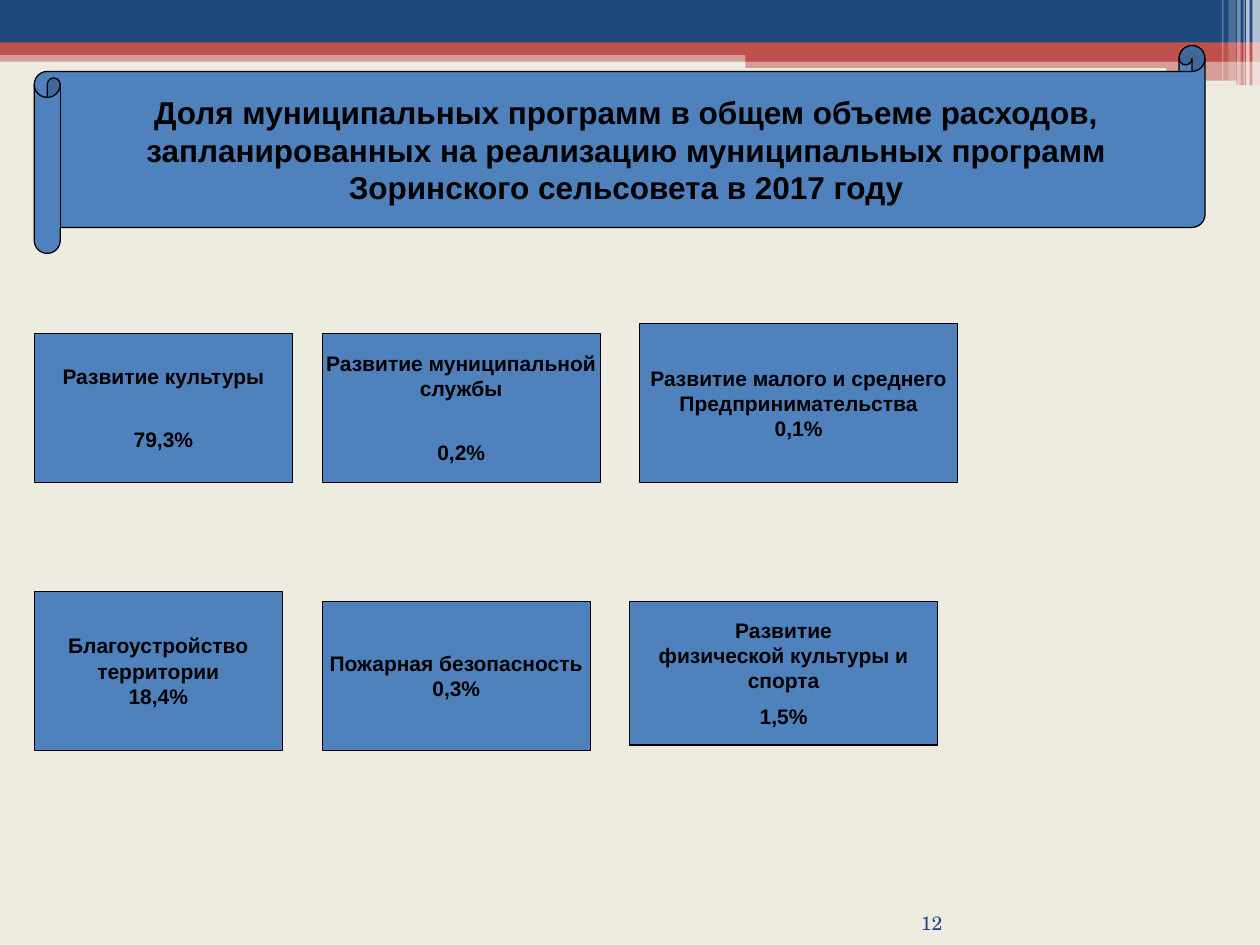
from dataclasses import dataclass

import pptx
import pptx.dml.color
import pptx.enum.shapes
import pptx.enum.text
import pptx.oxml
import pptx.oxml.ns
import pptx.util

Pt = pptx.util.Pt
Kind = pptx.enum.shapes.MSO_SHAPE
Align = pptx.enum.text.PP_ALIGN
Anchor = pptx.enum.text.MSO_ANCHOR

COLORS = {
    "cream": "EEECE1",
    "navy": "1F497D",
    "red": "C0504D",
    "blue": "4F81BD",
    "white": "FFFFFF",
    "black": "000000",
}


@dataclass(frozen=True)
class Band:
    left: float
    top: float
    width: float
    height: float
    color: str
    opacity: int = 100
    kind: Kind = Kind.RECTANGLE


@dataclass(frozen=True)
class Panel:
    left: float
    top: float
    width: float
    height: float
    lines: tuple[str, ...]
    gap_before_last: float = 0
    size: float = 12
    kind: Kind = Kind.FLOWCHART_PROCESS


HEADER_BANDS = (
    Band(0, 28.8, 720, 6.48, "red", 50),
    Band(0, 0, 720, 24.48, "navy"),
    Band(0, 24.2, 720, 7.2, "red"),
    Band(426, 28.08, 294, 7.2, "red"),
    Band(426, 34.7, 294, 14, "red", 50),
    Band(425.5, 38.9, 241, 2, "cream", kind=Kind.ROUNDED_RECTANGLE),
    Band(580.5, 46.1, 126, 2.6, "cream", kind=Kind.ROUNDED_RECTANGLE),
    Band(715.7, 0, 4.3, 48.8, "white", 65),
    Band(712.1, 0, 2, 48.8, "white", 65),
    Band(710.6, 0, 0.72, 48.8, "white", 60),
    Band(707, 0, 2, 48.8, "white", 40),
    Band(702, 0, 4.3, 46.1, "white", 20),
    Band(698.4, 0, 0.72, 46.1, "white", 30),
)

FIRST_COLUMN, SECOND_COLUMN = 19.6, 184.2

PROGRAMS = (
    Panel(FIRST_COLUMN, 190.5, 147.6, 85.1,
          ("Развитие культуры", "79,3%"), 22),
    Panel(SECOND_COLUMN, 190.5, 158.8, 85.1,
          ("Развитие муниципальной", "службы", "0,2%"), 22),
    Panel(365.6, 184.8, 181.6, 90.8,
          ("Развитие малого и среднего", "Предпринимательства", "0,1%")),
    Panel(FIRST_COLUMN, 337.9, 141.7, 90.8,
          ("Благоустройство", "территории", "18,4%")),
    Panel(SECOND_COLUMN, 343.6, 153.1, 85.1,
          ("Пожарная безопасность", "0,3%")),
    Panel(359.9, 343.6, 175.8, 82.1,
          ("Развитие", "физической культуры и", "спорта", "1,5%"), 6),
)

TITLE = Panel(
    FIRST_COLUMN, 26, 669, 118.8,
    (
        "Доля муниципальных программ в общем объеме расходов,",
        "запланированных на реализацию муниципальных программ",
        "Зоринского сельсовета в 2017 году",
    ),
    size=18,
    kind=Kind.HORIZONTAL_SCROLL,
)


def rgb(name: str) -> pptx.dml.color.RGBColor:
    return pptx.dml.color.RGBColor.from_string(COLORS[name])


def add_filled_shape(slide, item: Band | Panel, color: str):
    shape = slide.shapes.add_shape(
        item.kind, Pt(item.left), Pt(item.top), Pt(item.width), Pt(item.height)
    )
    shape.shadow.inherit = False
    shape.fill.solid()
    shape.fill.fore_color.rgb = rgb(color)
    return shape


def draw_band(slide, band: Band) -> None:
    shape = add_filled_shape(slide, band, band.color)
    shape.line.fill.background()
    if band.opacity < 100:
        srgb = shape.fill._xPr.find(".//" + pptx.oxml.ns.qn("a:srgbClr"))
        alpha = pptx.oxml.parse_xml(
            f'<a:alpha {pptx.oxml.ns.nsdecls("a")} val="{band.opacity * 1000}"/>'
        )
        srgb.append(alpha)


def add_run(paragraph, text: str, size: float, font: str, color: str, bold: bool) -> None:
    run = paragraph.add_run()
    run.text = text
    run.font.size = Pt(size)
    run.font.name = font
    run.font.bold = bold
    run.font.color.rgb = rgb(color)


def draw_panel(slide, panel: Panel) -> None:
    shape = add_filled_shape(slide, panel, "blue")
    shape.line.color.rgb = rgb("black")
    shape.line.width = Pt(0.75)
    frame = shape.text_frame
    frame.word_wrap = False
    frame.vertical_anchor = Anchor.MIDDLE
    for index, line in enumerate(panel.lines):
        paragraph = frame.add_paragraph() if index else frame.paragraphs[0]
        paragraph.alignment = Align.CENTER
        add_run(paragraph, line, panel.size, "Arial", "black", True)
    paragraph.space_before = Pt(panel.gap_before_last)


def draw_page_number(slide, number: str) -> None:
    frame = slide.shapes.add_textbox(Pt(492.5), Pt(516.2), Pt(46), Pt(18)).text_frame
    frame.margin_left = frame.margin_right = frame.margin_top = frame.margin_bottom = 0
    frame.word_wrap = True
    frame.vertical_anchor = Anchor.BOTTOM
    paragraph = frame.paragraphs[0]
    paragraph.alignment = Align.RIGHT
    add_run(paragraph, number, 11, "TeX Gyre Schola", "navy", False)


def main() -> None:
    deck = pptx.Presentation()
    deck.slide_width, deck.slide_height = Pt(720), Pt(540)
    slide = deck.slides.add_slide(deck.slide_layouts[6])
    slide.background.fill.solid()
    slide.background.fill.fore_color.rgb = rgb("cream")
    for band in HEADER_BANDS:
        draw_band(slide, band)
    draw_page_number(slide, "12")
    for panel in (*PROGRAMS, TITLE):
        draw_panel(slide, panel)
    deck.save("out.pptx")


if __name__ == "__main__":
    main()
